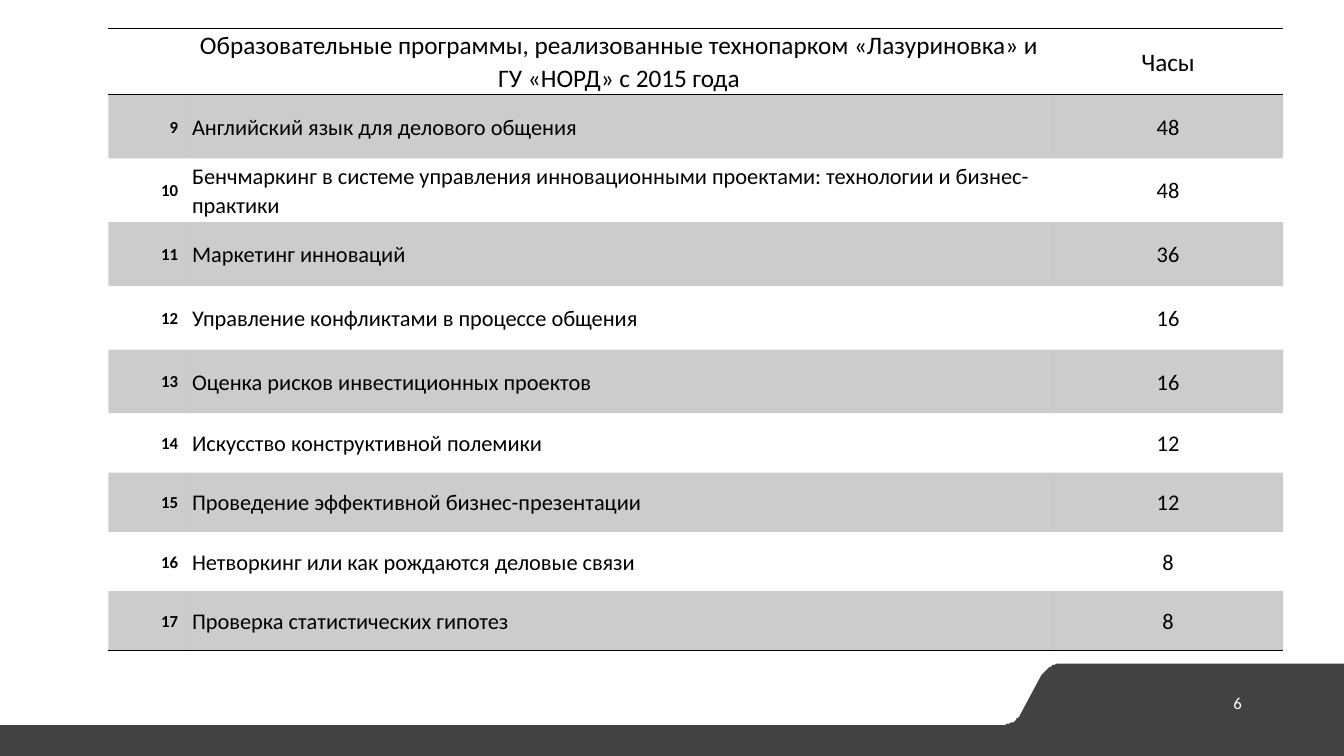
from lxml import etree
from pptx import Presentation, util as u
from pptx.dml.color import RGBColor
from pptx.enum import text as t
from pptx.oxml import ns

COLOURS = {"black": "000000", "white": "FFFFFF", "footer": "424242"}
PROGRAMMES = [
    ("Английский язык для делового общения", 48),
    ("Бенчмаркинг в системе управления инновационными проектами: технологии и бизнес-практики", 48),
    ("Маркетинг инноваций", 36),
    ("Управление конфликтами в процессе общения", 16),
    ("Оценка рисков инвестиционных проектов", 16),
    ("Искусство конструктивной полемики", 12),
    ("Проведение эффективной бизнес-презентации", 12),
    ("Нетворкинг или как рождаются деловые связи", 8),
    ("Проверка статистических гипотез", 8),
]
FIRST_NUMBER = 9
LEFT, CENTER, RIGHT = t.PP_ALIGN.LEFT, t.PP_ALIGN.CENTER, t.PP_ALIGN.RIGHT


def write(frame, words, size=16, bold=False, colour="black", align=LEFT, spacing=1.07):
    para = frame.paragraphs[0]
    para.alignment = align
    para.line_spacing = spacing
    span = para.add_run()
    span.text = words
    span.font.name = "Calibri"
    span.font.size = u.Pt(size)
    span.font.bold = bold
    span.font.color.rgb = RGBColor.from_string(COLOURS[colour])


def curve(start, control_1, control_2, end, steps=12):
    """Return points along a cubic Bezier curve."""
    points = []
    for step in range(steps + 1):
        f = step / steps
        weights = ((1 - f) ** 3, 3 * f * (1 - f) ** 2, 3 * f ** 2 * (1 - f), f ** 3)
        corners = (start, control_1, control_2, end)
        points.append(tuple(sum(w * c[axis] for w, c in zip(weights, corners)) for axis in (0, 1)))
    return points


deck = Presentation()
deck.slide_width, deck.slide_height = u.Pt(960), u.Pt(540)
page = deck.slides.add_slide(deck.slide_layouts[6])

# Footer band with a raised tab on the right
outline = curve((759.6, 473.8), (753, 473.8), (747.4, 477.2), (744.5, 482.4))
outline += curve((728.6, 510.5), (726.2, 514.9), (721.5, 517.7), (716.4, 517.7))
outline += [(0, 517.7), (0, 540), (960, 540), (960, 473.8)]
builder = page.shapes.build_freeform(*outline[0], scale=u.Pt(1))
builder.add_line_segments(outline[1:], close=True)
footer = builder.convert_to_shape()
footer.shadow.inherit = False
footer.fill.solid()
footer.fill.fore_color.rgb = RGBColor.from_string(COLOURS["footer"])
footer.line.fill.background()

number_box = page.shapes.add_textbox(u.Pt(678.2), u.Pt(487.5), u.Pt(216), u.Pt(28.8))
number_box.text_frame.word_wrap = True
number_box.text_frame.vertical_anchor = t.MSO_ANCHOR.MIDDLE
write(number_box.text_frame, "6", size=12, colour="white", align=RIGHT, spacing=1)

# Programme table
heights = [47.5] + [45.5] * 5 + [42.4] * 4
widths = [54.7, 620, 164.3]
table_frame = page.shapes.add_table(len(heights), len(widths), u.Pt(77.5), u.Pt(20.2),
                                    u.Pt(sum(widths)), u.Pt(sum(heights)))
table = table_frame.table
table.first_row = table.horz_banding = False
NO_STYLE = "{2D5ABB26-0587-4C30-8999-92F81FD0307C}"
table_frame._element.find(".//" + ns.qn("a:tableStyleId")).text = NO_STYLE
for column, width in zip(table.columns, widths):
    column.width = u.Pt(width)
for row, height in zip(table.rows, heights):
    row.height = u.Pt(height)

last = len(PROGRAMMES)
for index, row in enumerate(table.rows):
    edges = {0: ("lnT", "lnB"), last: ("lnB",)}.get(index, ())
    for cell in row.cells:
        cell.vertical_anchor = t.MSO_ANCHOR.MIDDLE
        cell.margin_left = cell.margin_right = u.Pt(5)
        cell.margin_top = cell.margin_bottom = 0
        properties = cell._tc.get_or_add_tcPr()
        for edge in edges:
            line = etree.SubElement(properties, ns.qn("a:" + edge), w=str(u.Pt(1)))
            fill = etree.SubElement(line, ns.qn("a:solidFill"))
            etree.SubElement(fill, ns.qn("a:srgbClr"), val=COLOURS["black"])
        if index % 2:
            cell.fill.solid()
            cell.fill.fore_color.rgb = RGBColor.from_string(COLOURS["black"])
            shade = properties.find(ns.qn("a:solidFill")).find(ns.qn("a:srgbClr"))
            etree.SubElement(shade, ns.qn("a:alpha"), val="20000")

write(table.cell(0, 1).text_frame,
      "Образовательные программы, реализованные технопарком «Лазуриновка» и ГУ «НОРД» с 2015 года",
      size=18, align=CENTER)
write(table.cell(0, 2).text_frame, "Часы", size=18, align=CENTER)
for index, (programme, hours) in enumerate(PROGRAMMES, 1):
    number, name, duration = table.rows[index].cells
    write(number.text_frame, str(FIRST_NUMBER + index - 1), size=12, bold=True, align=RIGHT)
    write(name.text_frame, programme)
    write(duration.text_frame, str(hours), align=CENTER)

deck.save("out.pptx")
